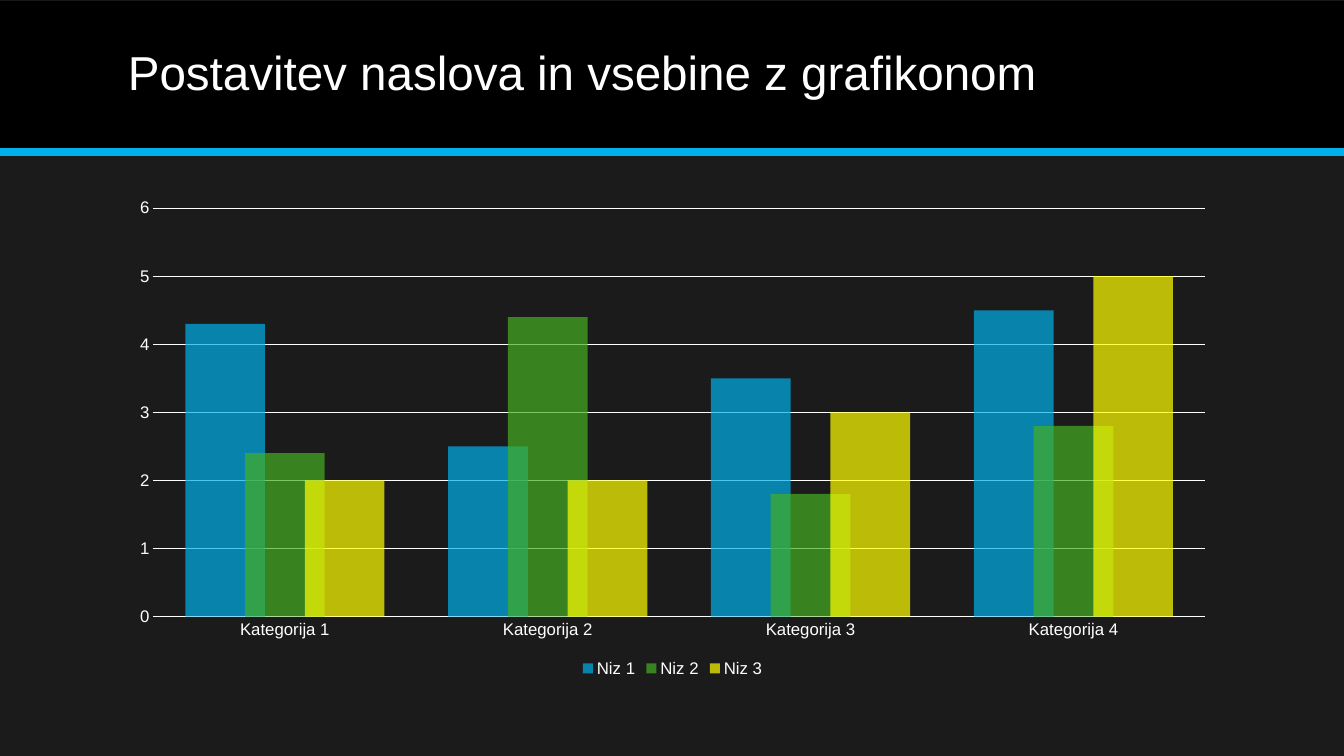
from dataclasses import dataclass

from lxml import etree
from pptx import Presentation
from pptx.chart.chart import Chart
from pptx.chart.data import CategoryChartData
from pptx.dml.color import RGBColor
from pptx.enum.chart import XL_CHART_TYPE as ChartType
from pptx.enum.chart import XL_LEGEND_POSITION as LegendPosition
from pptx.enum.chart import XL_TICK_MARK as TickMark
from pptx.enum.shapes import MSO_CONNECTOR as Connector
from pptx.enum.shapes import MSO_SHAPE as Preset
from pptx.enum.text import MSO_ANCHOR as Anchor
from pptx.oxml.ns import qn
from pptx.slide import Slide
from pptx.util import Inches, Pt

COLORS = {
    "background": "1B1B1B",
    "header": "000000",
    "text": "FFFFFF",
    "blue": "00B0EA",
    "green": "45AE22",
    "yellow": "FFFF00",
}
FONT = "Arial"
SLIDE_WIDTH = 13.33
HEADER_BOTTOM = 1.51
CONTENT_LEFT, CONTENT_WIDTH = 1.17, 11
OPACITY_PERCENT = 70


@dataclass(frozen=True)
class Series:
    name: str
    values: tuple[float, ...]
    color: str


CATEGORIES = [f"Kategorija {number}" for number in range(1, 5)]
SERIES = (
    Series("Niz 1", (4.3, 2.5, 3.5, 4.5), "blue"),
    Series("Niz 2", (2.4, 4.4, 1.8, 2.8), "green"),
    Series("Niz 3", (2, 2, 3, 5), "yellow"),
)


def rgb(name: str) -> RGBColor:
    return RGBColor.from_string(COLORS[name])


def style_font(font, size: float) -> None:
    font.name = FONT
    font.size = Pt(size)
    font.color.rgb = rgb("text")


def style_line(line, color: str, width: float) -> None:
    line.color.rgb = rgb(color)
    line.width = Pt(width)


def draw_header(slide: Slide) -> None:
    band = slide.shapes.add_shape(
        Preset.RECTANGLE, 0, Inches(0.01), Inches(SLIDE_WIDTH), Inches(1.5)
    )
    band.shadow.inherit = False
    band.fill.solid()
    band.fill.fore_color.rgb = rgb("header")
    band.line.fill.background()

    rule = slide.shapes.add_connector(
        Connector.STRAIGHT, 0, Inches(HEADER_BOTTOM), Inches(SLIDE_WIDTH), Inches(HEADER_BOTTOM)
    )
    style_line(rule.line, "blue", 6)
    etree.SubElement(rule._element.spPr, qn("a:effectLst"))


def draw_title(slide: Slide, wording: str) -> None:
    title = slide.shapes.add_textbox(
        Inches(CONTENT_LEFT), Inches(0.15), Inches(CONTENT_WIDTH), Inches(1.2)
    ).text_frame
    title.word_wrap = True
    title.vertical_anchor = Anchor.MIDDLE
    paragraph = title.paragraphs[0]
    paragraph.line_spacing = 0.9
    run = paragraph.add_run()
    run.text = wording
    style_font(run.font, 34)


def style_axes(chart: Chart) -> None:
    for axis in (chart.category_axis, chart.value_axis):
        axis.major_tick_mark = TickMark.NONE
        axis.minor_tick_mark = TickMark.NONE
        style_font(axis.tick_labels.font, 12)
    style_line(chart.category_axis.format.line, "text", 1.25)

    scale = chart.value_axis
    scale.minimum_scale, scale.maximum_scale, scale.major_unit = 0, 6, 1
    scale.format.line.fill.background()
    scale.has_major_gridlines = True
    style_line(scale.major_gridlines.format.line, "text", 0.75)


def style_bars(chart: Chart) -> None:
    plot = chart.plots[0]
    plot.gap_width = 80
    plot.overlap = 25
    plot.vary_by_categories = False
    for bars, series in zip(plot.series, SERIES):
        bars.invert_if_negative = False
        fill = bars.format.fill
        fill.solid()
        fill.fore_color.rgb = rgb(series.color)
        color = bars._element.spPr.find(f"{qn('a:solidFill')}/{qn('a:srgbClr')}")
        etree.SubElement(color, qn("a:alpha"), val=str(OPACITY_PERCENT * 1000))


def draw_chart(slide: Slide) -> None:
    chart_data = CategoryChartData()
    chart_data.categories = CATEGORIES
    for series in SERIES:
        chart_data.add_series(series.name, series.values)
    chart = slide.shapes.add_chart(
        ChartType.COLUMN_CLUSTERED,
        Inches(CONTENT_LEFT), Inches(1.88), Inches(CONTENT_WIDTH), Inches(4.88),
        chart_data,
    ).chart
    style_font(chart.font, 10)
    chart.has_title = False
    chart.has_legend = True
    chart.legend.position = LegendPosition.BOTTOM
    chart.legend.include_in_layout = False
    style_font(chart.legend.font, 12)
    style_axes(chart)
    style_bars(chart)


def main() -> None:
    presentation = Presentation()
    presentation.slide_width = Inches(SLIDE_WIDTH)
    presentation.slide_height = Inches(7.5)
    slide = presentation.slides.add_slide(presentation.slide_layouts[6])
    slide.background.fill.solid()
    slide.background.fill.fore_color.rgb = rgb("background")
    draw_header(slide)
    draw_title(slide, "Postavitev naslova in vsebine z grafikonom")
    draw_chart(slide)
    presentation.save("out.pptx")


if __name__ == "__main__":
    main()
